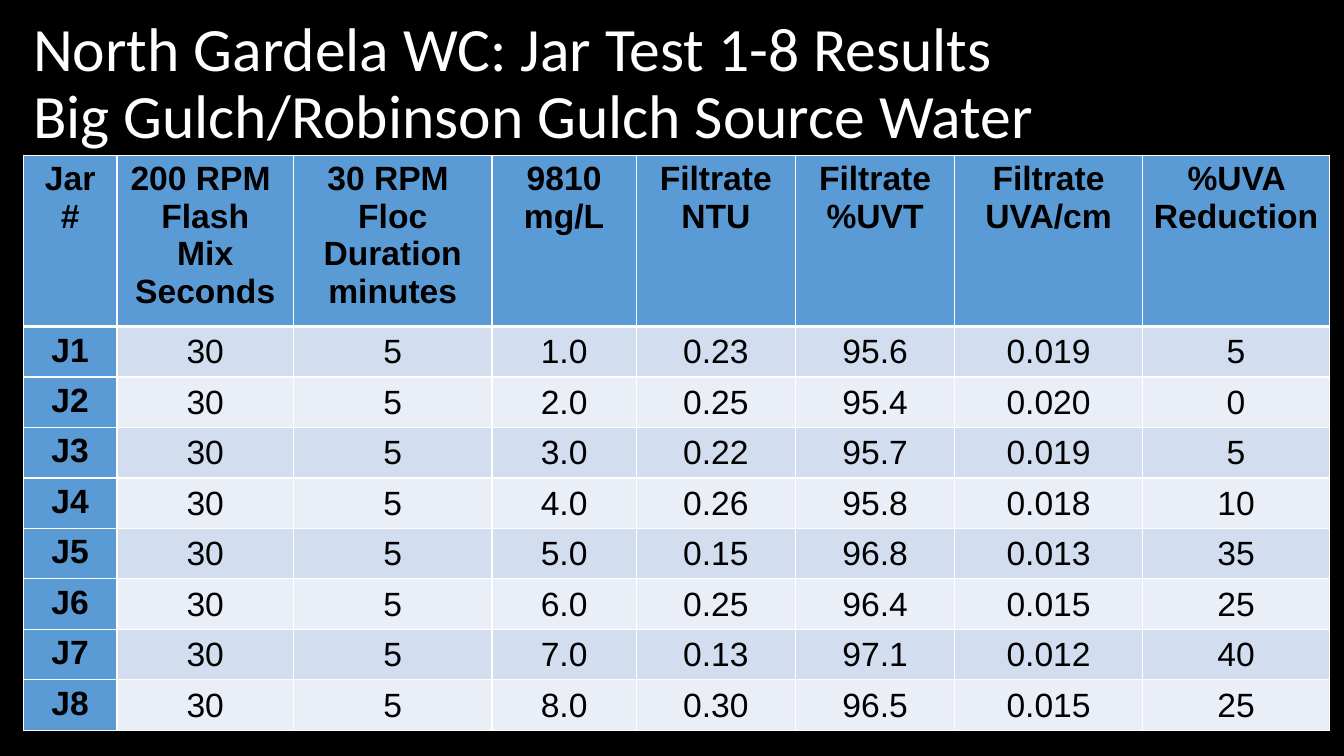
from dataclasses import dataclass

from lxml.etree import SubElement
from pptx import Presentation
from pptx.dml.color import RGBColor as RGB
from pptx.enum.text import MSO_ANCHOR as Anchor, PP_ALIGN as Align
from pptx.oxml.ns import qn
from pptx.util import Inches, Pt


@dataclass(frozen=True)
class Theme:
    background: str = "000000"
    title: str = "FFFFFF"
    text: str = "000000"
    accent: str = "5B9BD5"
    bands: tuple = ("D2DEEF", "EAEFF7")
    border: str = "FFFFFF"
    title_font: str = "Calibri"
    table_font: str = "Arial"
    title_size: int = 44
    table_size: int = 24
    thin: int = 1
    thick: int = 3


THEME = Theme()
SLIDE_W, SLIDE_H = Inches(13.33), Inches(7.5)

# Boxes: left, top, width, height in percent of the slide
TITLE_BOX = (1.73, 1.6, 91.45, 19.33)
TABLE_BOX = (1.73, 20.53, 97.22, 71.2)

# Relative column widths and row heights of the results table
COL_WEIGHTS = (0.93, 1.75, 1.97, 1.43, 1.58, 1.58, 1.86, 1.86)
HEADER_WEIGHT, JAR_WEIGHT = 1.58, 0.47

TITLE_LINES = ("North Gardela WC: Jar Test 1-8 Results",
               "Big Gulch/Robinson Gulch Source Water")
HEADERS = (
    ("Jar", "#"),
    ("200 RPM ", "Flash", "Mix", "Seconds"),
    ("30 RPM ", "Floc", "Duration", "minutes"),
    ("9810", "mg/L"),
    ("Filtrate", "NTU"),
    ("Filtrate", "%UVT"),
    ("Filtrate", "UVA/cm"),
    ("%UVA Reduction",),
)
FLASH_SECONDS, FLOC_MINUTES = "30", "5"
# NTU, %UVT, UVA/cm, %UVA reduction for each jar
FILTRATE = (
    ("0.23", "95.6", "0.019", "5"),
    ("0.25", "95.4", "0.020", "0"),
    ("0.22", "95.7", "0.019", "5"),
    ("0.26", "95.8", "0.018", "10"),
    ("0.15", "96.8", "0.013", "35"),
    ("0.25", "96.4", "0.015", "25"),
    ("0.13", "97.1", "0.012", "40"),
    ("0.30", "96.5", "0.015", "25"),
)

LABEL_CELL = {"vertical_anchor": Anchor.TOP,
              "margin_left": Inches(0.1), "margin_right": Inches(0.1),
              "margin_top": Inches(0.05), "margin_bottom": Inches(0.05)}
VALUE_CELL = {"vertical_anchor": Anchor.MIDDLE,
              "margin_left": Inches(0.01), "margin_right": Inches(0.01),
              "margin_top": Inches(0.01), "margin_bottom": 0}


def set_attrs(obj, values):
    for name, value in values.items():
        setattr(obj, name, value)


def place(box):
    """Turn a box in percent into slide lengths."""
    return [round(share * full / 100)
            for share, full in zip(box, (SLIDE_W, SLIDE_H) * 2)]


def style_font(font, name, size, color, bold=False):
    set_attrs(font, {"name": name, "size": Pt(size), "bold": bold})
    font.color.rgb = RGB.from_string(color)


def add_title(s, box):
    tf = s.shapes.add_textbox(*place(box)).text_frame
    set_attrs(tf, {"word_wrap": True, "vertical_anchor": Anchor.MIDDLE})
    p = tf.paragraphs[0]
    p.line_spacing = 0.9
    for i, line in enumerate(TITLE_LINES):
        if i:
            p.add_line_break()
        r = p.add_run()
        r.text = line
        style_font(r.font, THEME.title_font, THEME.title_size, THEME.title)


def add_borders(cell, widths):
    tc_pr = cell._tc.get_or_add_tcPr()
    for side, width in widths.items():
        ln = SubElement(tc_pr, qn(f"a:ln{side}"), w=str(Pt(width)))
        fill = SubElement(ln, qn("a:solidFill"))
        SubElement(fill, qn("a:srgbClr"), val=THEME.border)


def fill_cell(cell, lines, row, col):
    is_label = row == 0 or col == 0
    set_attrs(cell, LABEL_CELL if is_label else VALUE_CELL)
    # The rule between header and jars is thick
    add_borders(cell, {"L": THEME.thin, "R": THEME.thin,
                       "T": THEME.thick if row == 1 else THEME.thin,
                       "B": THEME.thick if row == 0 else THEME.thin})
    color = THEME.accent if is_label else THEME.bands[(row - 1) % 2]
    cell.fill.solid()
    cell.fill.fore_color.rgb = RGB.from_string(color)
    tf = cell.text_frame
    for i, line in enumerate(lines):
        p = tf.add_paragraph() if i else tf.paragraphs[0]
        p.alignment = Align.CENTER
        r = p.add_run()
        r.text = line
        style_font(r.font, THEME.table_font, THEME.table_size, THEME.text, is_label)


def add_results_table(s, box):
    left, top, width, height = place(box)
    # Each jar gets one more mg/L than the one before
    jars = [[(text,) for text in (f"J{n}", FLASH_SECONDS, FLOC_MINUTES, f"{n}.0", *values)]
            for n, values in enumerate(FILTRATE, 1)]
    rows = [HEADERS, *jars]
    table = s.shapes.add_table(len(rows), len(HEADERS), left, top, width, height).table
    set_attrs(table, {"first_row": True, "first_col": True, "horz_banding": False})

    # Share the box out by weight
    row_weights = [HEADER_WEIGHT] + [JAR_WEIGHT] * len(jars)
    for column, weight in zip(table.columns, COL_WEIGHTS):
        column.width = round(width * weight / sum(COL_WEIGHTS))
    for table_row, weight in zip(table.rows, row_weights):
        table_row.height = round(height * weight / sum(row_weights))

    for i, row in enumerate(rows):
        for j, lines in enumerate(row):
            fill_cell(table.cell(i, j), lines, i, j)


def add_results_slide(prs):
    s = prs.slides.add_slide(prs.slide_layouts[6])
    s.background.fill.solid()
    s.background.fill.fore_color.rgb = RGB.from_string(THEME.background)
    add_title(s, TITLE_BOX)
    add_results_table(s, TABLE_BOX)


def main():
    prs = Presentation()
    set_attrs(prs, {"slide_width": SLIDE_W, "slide_height": SLIDE_H})
    add_results_slide(prs)
    prs.save("out.pptx")


if __name__ == "__main__":
    main()
